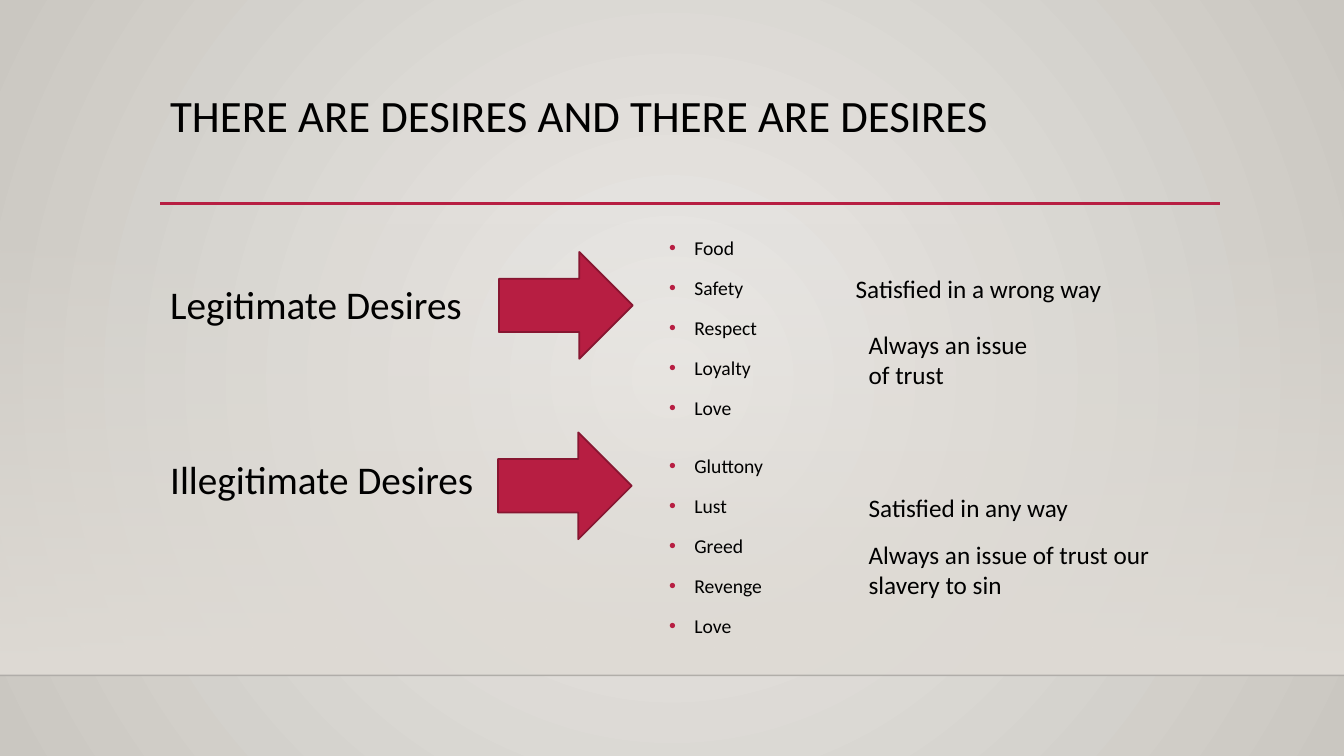
from dataclasses import dataclass

from lxml import etree
from pptx import Presentation
from pptx.dml.color import RGBColor
from pptx.enum.shapes import MSO_CONNECTOR, MSO_SHAPE
from pptx.oxml.ns import qn
from pptx.util import Pt

RECTANGLE = MSO_SHAPE.RECTANGLE
RIGHT_ARROW = MSO_SHAPE.RIGHT_ARROW
STRAIGHT = MSO_CONNECTOR.STRAIGHT


@dataclass(frozen=True)
class Theme:
    """Colours, font and type sizes of the slide."""
    font: str = "Calibri"
    text: str = "000000"
    accent: str = "B71E42"
    accent_dark: str = "871631"
    glow: str = "ECEAE7"
    edge: str = "CAC7C1"
    wall: str = "DFDBD5"
    floor: str = "000001"
    title: int = 32
    heading: int = 28
    note: int = 18
    item: int = 14


THEME = Theme()
WIDTH, HEIGHT = 960, 540
MARGIN = 114.5
FLOOR_TOP = 482.4
LIST_LEFT = 470.9
GROUPS = [
    {
        "heading": ("Legitimate Desires", 196.6),
        "arrow": (356.4, 180),
        "items": ("Food", "Safety", "Respect", "Loyalty", "Love"),
        "list_top": 163.4,
        "notes": [("Satisfied in a wrong way", 604.1, 191.5, 200.9, 28.8),
                  ("Always an issue of trust", 613.4, 231.8, 144, 51.1)],
    },
    {
        "heading": ("Illegitimate Desires", 321.8),
        "arrow": (355.7, 308.9),
        "items": ("Gluttony", "Lust", "Greed", "Revenge", "Love"),
        "list_top": 319,
        "notes": [("Satisfied in any way", 613.4, 347.8, 200.9, 28.8),
                  ("Always an issue of trust our slavery to sin",
                   613.4, 381.6, 264.2, 51.1)],
    },
]


def rgb(value):
    """Return a colour from its hex code."""
    return RGBColor.from_string(value)


def set_alpha(element, percent):
    """Set the opacity of the first colour inside an element."""
    color = element.find(".//" + qn("a:srgbClr"))
    etree.SubElement(color, qn("a:alpha"), val=str(percent * 1000))


def set_gradient(fill, start, end):
    """Give a fill a two-colour gradient."""
    fill.gradient()
    for stop, color, position in zip(fill.gradient_stops, (start, end), (0, 1)):
        stop.color.rgb = rgb(color)
        stop.position = position


def add_background(s):
    """Fill the background with a light glow from the centre."""
    set_gradient(s.background.fill, THEME.glow, THEME.edge)
    gradient = s.element.find(".//" + qn("a:gradFill"))
    gradient.remove(gradient.find(qn("a:lin")))
    circle = etree.SubElement(gradient, qn("a:path"), {"path": "circle"})
    etree.SubElement(circle, qn("a:fillToRect"),
                     dict.fromkeys("ltrb", "50000"))


def add_wall(s):
    """Add the band that fades in towards the floor line."""
    top = 159.1
    sp = s.shapes.add_shape(RECTANGLE, 0, Pt(top), Pt(WIDTH), Pt(FLOOR_TOP - top))
    sp.shadow.inherit = False
    set_gradient(sp.fill, THEME.wall, THEME.wall)
    sp.fill.gradient_angle = 270
    set_alpha(sp.element.spPr, 0)
    sp.line.fill.background()


def add_rule(s, left, right, top, color, width):
    """Add a horizontal line and return it."""
    line = s.shapes.add_connector(STRAIGHT, Pt(left), Pt(top), Pt(right), Pt(top))
    line.line.color.rgb = rgb(color)
    line.line.width = Pt(width)
    etree.SubElement(line.element.spPr, qn("a:effectLst"))
    return line


def add_arrow(s, left, top):
    """Add a block arrow pointing right."""
    sp = s.shapes.add_shape(RIGHT_ARROW, Pt(left), Pt(top), Pt(95.5), Pt(76.3))
    sp.shadow.inherit = False
    sp.fill.solid()
    sp.fill.fore_color.rgb = rgb(THEME.accent)
    sp.line.color.rgb = rgb(THEME.accent_dark)
    sp.line.width = Pt(1.25)


def add_text(s, text, left, top, width, height, size):
    """Add a wrapped text box and return its text frame."""
    tf = s.shapes.add_textbox(Pt(left), Pt(top), Pt(width), Pt(height)).text_frame
    tf.word_wrap = True
    tf.text = text
    for p in tf.paragraphs:
        for r in p.runs:
            r.font.name = THEME.font
            r.font.size = Pt(size)
            r.font.color.rgb = rgb(THEME.text)
    return tf


def add_bullet(p):
    """Give a paragraph a coloured bullet and a hanging indent."""
    pPr = p._p.get_or_add_pPr()
    pPr.set("marL", str(Pt(18)))
    pPr.set("indent", str(-Pt(18)))
    color = etree.SubElement(pPr, qn("a:buClr"))
    etree.SubElement(color, qn("a:srgbClr"), val=THEME.accent)
    etree.SubElement(pPr, qn("a:buFont"), typeface="Arial")
    etree.SubElement(pPr, qn("a:buChar"), char="•")


def add_list(s, items, top):
    """Add a bulleted list of desires."""
    tf = add_text(s, "\n".join(items), LIST_LEFT, top, 303.1, 138.2, THEME.item)
    for i, p in enumerate(tf.paragraphs):
        add_bullet(p)
        p.line_spacing = 1.1
        p.space_before = Pt(10 if i else 0)


def add_group(s, group):
    """Add a heading with its arrow, list and notes."""
    heading, top = group["heading"]
    add_text(s, heading, MARGIN, top, 268.6, 41, THEME.heading)
    add_arrow(s, *group["arrow"])
    add_list(s, group["items"], group["list_top"])
    for note in group["notes"]:
        add_text(s, *note, THEME.note)


def main():
    """Build the slide and save it."""
    prs = Presentation()
    prs.slide_width, prs.slide_height = Pt(WIDTH), Pt(HEIGHT)
    s = prs.slides.add_slide(prs.slide_layouts[6])
    add_background(s)
    add_wall(s)
    floor = add_rule(s, 0, WIDTH, FLOOR_TOP, THEME.floor, 1)
    set_alpha(floor.element.spPr, 20)
    add_rule(s, MARGIN, 871.2, 145.4, THEME.accent, 2.5)
    title = add_text(s, "THERE ARE DESIRES AND THERE ARE DESIRES",
                     MARGIN, 63.4, 756, 82.8, THEME.title)
    title.paragraphs[0].line_spacing = 0.9
    for group in GROUPS:
        add_group(s, group)
    prs.save("out.pptx")


if __name__ == "__main__":
    main()
